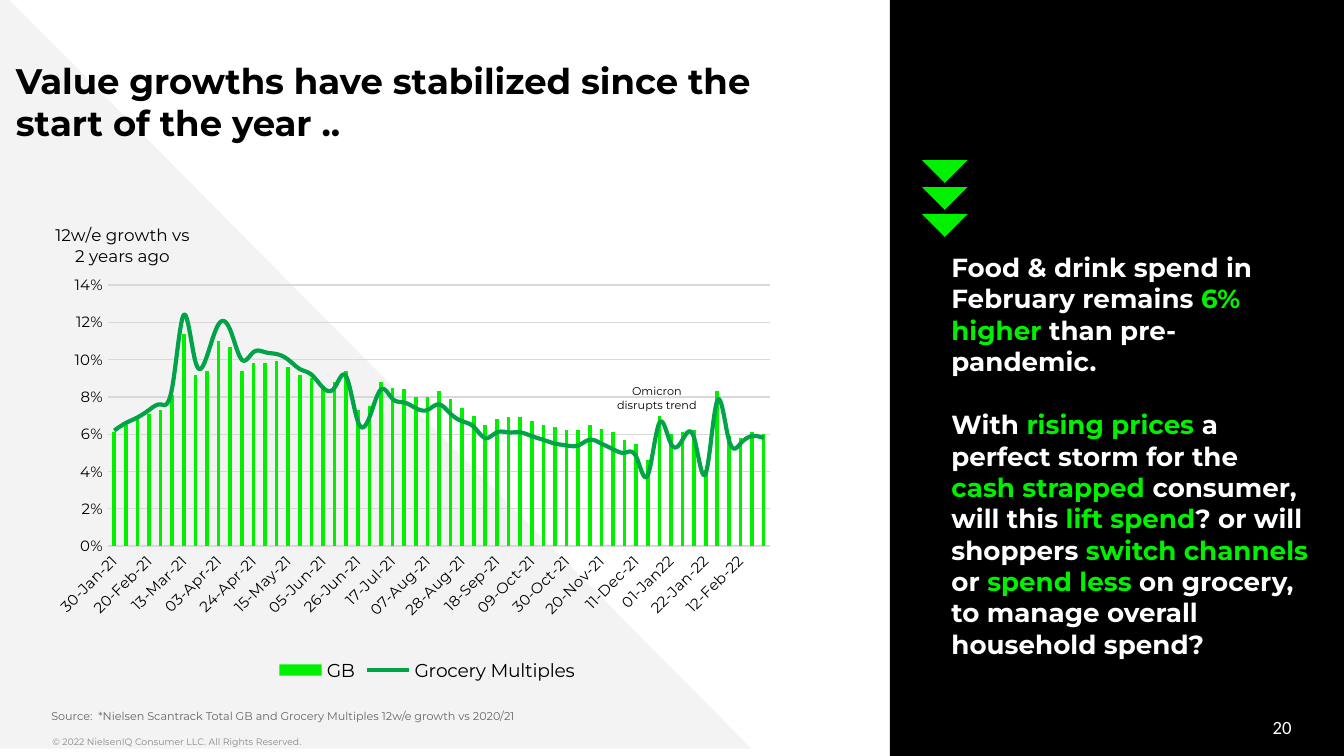
"""Build the grocery value growth slide with its combined chart and commentary."""
from dataclasses import dataclass

from lxml.etree import SubElement
from pptx import Presentation
from pptx.chart.data import CategoryChartData
from pptx.dml.color import RGBColor
from pptx.enum.chart import XL_CHART_TYPE, XL_LEGEND_POSITION, XL_MARKER_STYLE, XL_TICK_MARK
from pptx.enum.shapes import MSO_SHAPE
from pptx.enum.text import MSO_ANCHOR, MSO_AUTO_SIZE, PP_ALIGN
from pptx.oxml import parse_xml
from pptx.oxml.ns import nsdecls, qn
from pptx.util import Cm, Pt

BLACK = RGBColor(0x00, 0x00, 0x00)
WHITE = RGBColor(0xFF, 0xFF, 0xFF)
PALE_GREY = RGBColor(0xF3, 0xF3, 0xF3)
GRID_GREY = RGBColor(0xD9, 0xD9, 0xD9)
SOURCE_GREY = RGBColor(0x66, 0x66, 0x66)
COPYRIGHT_GREY = RGBColor(0x88, 0x88, 0x88)
BRIGHT_GREEN = RGBColor(0x00, 0xF0, 0x00)
DEEP_GREEN = RGBColor(0x00, 0xA3, 0x46)
FONT = "Montserrat"

TITLE = "Value growths have stabilized since the start of the year .."
COMMENTARY = (
    (("Food & drink spend in February remains ", WHITE), ("6% higher ", BRIGHT_GREEN),
     ("than pre-pandemic.", WHITE)),
    (("With ", WHITE), ("rising prices ", BRIGHT_GREEN), ("a perfect storm for the ", WHITE),
     ("cash strapped ", BRIGHT_GREEN), ("consumer, will this ", WHITE),
     ("lift spend", BRIGHT_GREEN), ("? or will shoppers ", WHITE),
     ("switch channels ", BRIGHT_GREEN), ("or ", WHITE), ("spend less", BRIGHT_GREEN),
     (" on grocery, to manage overall household spend?", WHITE)),
)
WEEKS = """
30-Jan-21 06-Feb-21 13-Feb-21 20-Feb-21 27-Feb-21 06-Mar-21 13-Mar-21 20-Mar-21 27-Mar-21 03-Apr-21
10-Apr-21 17-Apr-21 24-Apr-21 01-May-21 08-May-21 15-May-21 22-May-21 29-May-21 05-Jun-21 12-Jun-21
19-Jun-21 26-Jun-21 03-Jul-21 10-Jul-21 17-Jul-21 24-Jul-21 31-Jul-21 07-Aug-21 14-Aug-21 21-Aug-21
28-Aug-21 04-Sep-21 11-Sep-21 18-Sep-21 25-Sep-21 02-Oct-21 09-Oct-21 16-Oct-21 23-Oct-21 30-Oct-21
06-Nov-21 13-Nov-21 20-Nov-21 27-Nov-21 04-Dec-21 11-Dec-21 18-Dec-21 25-Dec-21 01-Jan22 08-Jan-22
15-Jan-22 22-Jan-22 29-Jan-22 05-Feb-22 12-Feb-22 19-Feb-22 26-Feb-22
""".split()
GROWTH_PER_MILLE = {
    "GB": (61, 65, 68, 71, 73, 81, 114, 92, 94, 110, 107, 94, 98, 98, 99, 96, 92, 90, 86, 88,
           94, 73, 75, 88, 85, 84, 80, 80, 83, 79, 74, 70, 65, 68, 69, 69, 67, 65, 64, 62,
           62, 65, 63, 61, 57, 55, 46, 70, 60, 61, 62, 41, 83, 59, 58, 61, 60),
    "Grocery Multiples": (
        62, 66, 69, 73, 76, 85, 124, 99, 102, 119, 116, 100, 104, 104, 103, 100, 95, 92, 85, 85,
        91, 67, 69, 84, 79, 77, 74, 73, 76, 71, 67, 64, 58, 61, 61, 61, 59, 57, 55, 54,
        54, 57, 55, 52, 50, 48, 38, 66, 55, 57, 58, 39, 78, 57, 55, 59, 58),
}


@dataclass
class Box:
    """Position and size in centimetres."""
    left: float
    top: float
    width: float
    height: float

    def lengths(self):
        return Cm(self.left), Cm(self.top), Cm(self.width), Cm(self.height)


@dataclass
class Label:
    """A small text and its format."""
    text: str
    box: Box
    size: float
    color: RGBColor
    font: str = FONT
    align: PP_ALIGN = PP_ALIGN.LEFT
    anchor: MSO_ANCHOR = MSO_ANCHOR.TOP
    side_inset: float = 0
    end_inset: float = 0.13


LABELS = (
    Label("© 2022 NielsenIQ Consumer LLC. All Rights Reserved.",
          Box(0.99, 13.79, 14.07, 0.51), 5, COPYRIGHT_GREY),
    Label("20", Box(18.69, 13.36, 5.72, 0.76), 10, WHITE, "Calibri", PP_ALIGN.RIGHT,
          MSO_ANCHOR.MIDDLE),
    Label("Source:  *Nielsen Scantrack Total GB and Grocery Multiples 12w/e growth vs 2020/21",
          Box(0.97, 13.41, 15.42, 0.51), 6, SOURCE_GREY, anchor=MSO_ANCHOR.BOTTOM,
          end_inset=0.25),
    Label("Omicron\ndisrupts trend", Box(11.02, 7.14, 2.79, 0.76), 6, BLACK,
          align=PP_ALIGN.CENTER, side_inset=0.25),
)


def set_font(font, size: float, color: RGBColor, name: str = FONT, bold: bool = False) -> None:
    font.size, font.name, font.bold = Pt(size), name, bold
    font.color.rgb = color


def set_frame(frame, side: float, end: float, anchor: MSO_ANCHOR = MSO_ANCHOR.TOP) -> None:
    frame.word_wrap = True
    frame.auto_size = MSO_AUTO_SIZE.NONE
    frame.vertical_anchor = anchor
    frame.margin_left = frame.margin_right = Cm(side)
    frame.margin_top = frame.margin_bottom = Cm(end)


def place(shape, box: Box) -> None:
    shape.left, shape.top, shape.width, shape.height = box.lengths()


def add_filled(slide, preset: MSO_SHAPE, box: Box, color: RGBColor, rotation: float = 0):
    shape = slide.shapes.add_shape(preset, *box.lengths())
    shape.shadow.inherit = False
    shape.fill.solid()
    shape.fill.fore_color.rgb = color
    shape.line.fill.background()
    shape.rotation = rotation
    return shape


def add_label(slide, label: Label) -> None:
    frame = slide.shapes.add_textbox(*label.box.lengths()).text_frame
    set_frame(frame, label.side_inset, label.end_inset, label.anchor)
    frame.text = label.text
    for paragraph in frame.paragraphs:
        paragraph.alignment = label.align
        set_font(paragraph.runs[0].font, label.size, label.color, label.font)


def fill_title(title) -> None:
    place(title, Box(0.3, 0.86, 15.7, 1.85))
    set_frame(title.text_frame, 0, 0.25)
    title.text_frame.text = TITLE
    paragraph = title.text_frame.paragraphs[0]
    paragraph.alignment = PP_ALIGN.LEFT
    set_font(paragraph.runs[0].font, 19, BLACK, bold=True)


def fill_commentary(body) -> None:
    place(body, Box(17.98, 4.62, 6.76, 7.09))
    frame = body.text_frame
    set_frame(frame, 0, 0.13)
    for index, spans in enumerate(COMMENTARY):
        paragraph = frame.add_paragraph() if index else frame.paragraphs[0]
        properties = paragraph._p.get_or_add_pPr()
        properties.set("marL", "0")
        properties.set("indent", "0")
        SubElement(properties, qn("a:buNone"))
        paragraph.space_before = Pt(17 * index)
        for text, color in spans:
            run = paragraph.add_run()
            run.text = text
            set_font(run.font, 14, color, bold=True)


def set_layout(parent, index: int, **fractions: float) -> None:
    for old in parent.findall(qn("c:layout")):
        parent.remove(old)
    target = '<c:layoutTarget val="inner"/>' if "w" in fractions else ""
    modes = "".join(f'<c:{key}Mode val="edge"/>' for key in "xy")
    values = "".join(f'<c:{key} val="{value}"/>' for key, value in fractions.items())
    parent.insert(index, parse_xml(
        f'<c:layout {nsdecls("c")}><c:manualLayout>{target}{modes}{values}'
        '</c:manualLayout></c:layout>'))


def move_last_series_to_line(chart) -> None:
    bars = chart.plots[0]._element
    series = bars.findall(qn("c:ser"))[-1]
    for bar_setting in series.findall(qn("c:invertIfNegative")):
        series.remove(bar_setting)
    lines = parse_xml(f'<c:lineChart {nsdecls("c")}><c:grouping val="standard"/>'
                      '<c:varyColors val="0"/><c:marker val="1"/></c:lineChart>')
    lines.insert(2, series)
    for axis in bars.findall(qn("c:axId")):
        SubElement(lines, qn("c:axId")).set("val", axis.get("val"))
    bars.addnext(lines)


def format_axes(chart) -> None:
    categories, values = chart.category_axis, chart.value_axis
    for axis in (categories, values):
        axis.major_tick_mark = axis.minor_tick_mark = XL_TICK_MARK.NONE
        set_font(axis.tick_labels.font, 8, BLACK)
    categories._element.find(qn("c:txPr")).find(qn("a:bodyPr")).set("rot", "-2700000")
    values.minimum_scale, values.maximum_scale, values.major_unit = 0, 0.14, 0.02
    values.tick_labels.number_format = "0%"
    values.tick_labels.number_format_is_linked = False
    values.format.line.fill.background()
    for line in (categories.format.line, values.major_gridlines.format.line):
        line.color.rgb, line.width = GRID_GREY, Pt(0.75)
    frame = values.axis_title.text_frame
    frame.text = "12w/e growth vs\n2 years ago"
    frame._txBody.find(qn("a:bodyPr")).set("rot", "0")
    for paragraph in frame.paragraphs:
        set_font(paragraph.runs[0].font, 9, BLACK)
    set_layout(values.axis_title._element, 1, x=0.0, y=0.01)


def add_growth_chart(slide) -> None:
    data = CategoryChartData(number_format="0.0%")
    data.categories = WEEKS
    for name, growths in GROWTH_PER_MILLE.items():
        data.add_series(name, [growth / 1000 for growth in growths])
    chart = slide.shapes.add_chart(XL_CHART_TYPE.COLUMN_CLUSTERED,
                                   *Box(0.97, 4.04, 14.2, 8.94).lengths(), data).chart
    set_font(chart.font, 10, BLACK)
    chart.has_title = False
    chart.has_legend = True
    chart.legend.position = XL_LEGEND_POSITION.BOTTOM
    chart.legend.include_in_layout = False
    set_font(chart.legend.font, 10, BLACK)
    move_last_series_to_line(chart)
    bars, lines = chart.plots
    bars.gap_width, bars.vary_by_categories = 219, False
    bars.series[0].format.fill.solid()
    bars.series[0].format.fill.fore_color.rgb = BRIGHT_GREEN
    multiples = lines.series[0]
    multiples.smooth = True
    multiples.marker.style = XL_MARKER_STYLE.NONE
    multiples.format.line.color.rgb, multiples.format.line.width = DEEP_GREEN, Pt(2.25)
    format_axes(chart)
    plot_area = chart._chartSpace.find(qn("c:chart")).find(qn("c:plotArea"))
    set_layout(plot_area, 0, x=0.076, y=0.151, w=0.88, h=0.552)


def main() -> None:
    presentation = Presentation()
    presentation.slide_width, presentation.slide_height = Cm(25.4), Cm(14.29)
    slide = presentation.slides.add_slide(presentation.slide_layouts[1])
    title, body = slide.placeholders
    panel = add_filled(slide, MSO_SHAPE.RECTANGLE, Box(16.82, 0, 8.58, 14.29), BLACK)
    wedge = add_filled(slide, MSO_SHAPE.RIGHT_TRIANGLE, Box(0, -0.18, 14.2, 14.33), PALE_GREY)
    for background in (panel, wedge):
        title.element.addprevious(background.element)
    fill_title(title)
    fill_commentary(body)
    for row in range(3):
        add_filled(slide, MSO_SHAPE.RIGHT_TRIANGLE, Box(17.55, 2.72 + 0.51 * row, 0.61, 0.61),
                   BRIGHT_GREEN, rotation=315)
    add_growth_chart(slide)
    for label in LABELS:
        add_label(slide, label)
    presentation.save("out.pptx")


if __name__ == "__main__":
    main()
